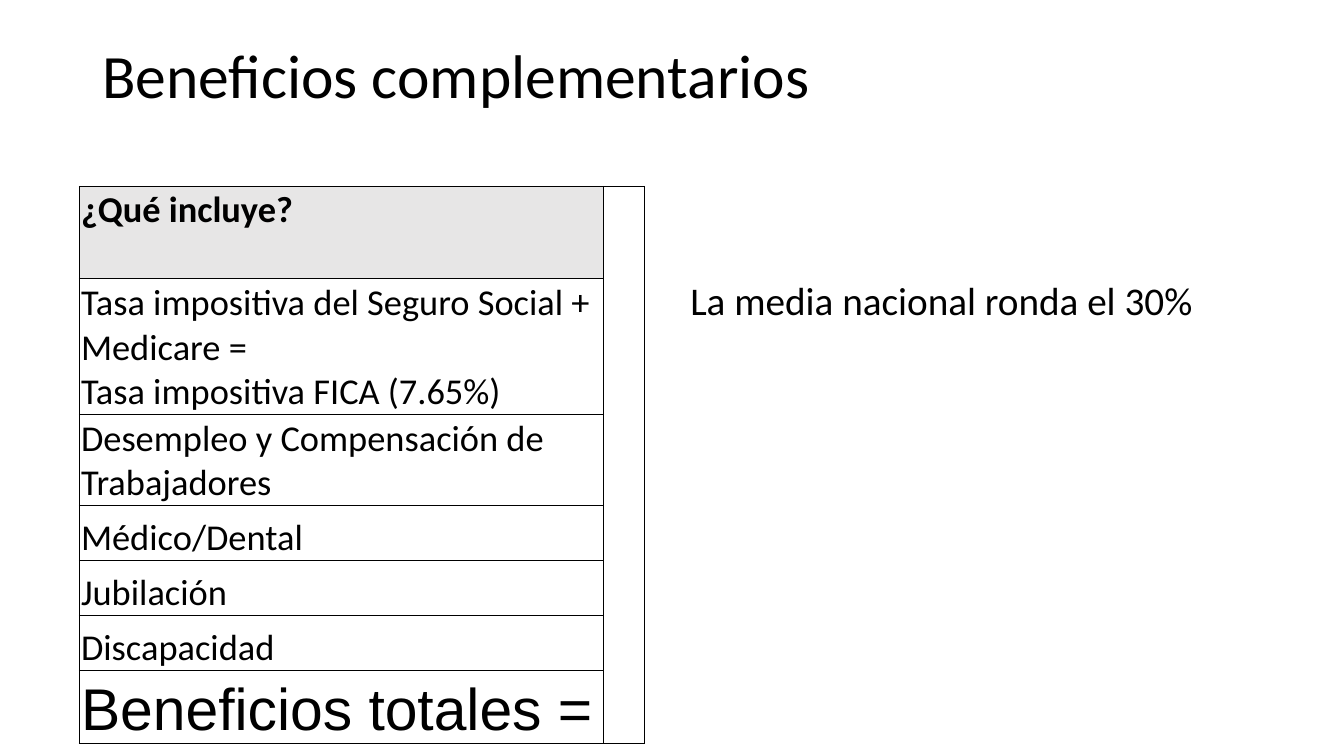
from lxml import etree
from pptx import Presentation
from pptx.dml.color import RGBColor
from pptx.enum.text import MSO_ANCHOR, PP_ALIGN
from pptx.oxml.ns import qn
from pptx.util import Pt

TOP, BOTTOM = MSO_ANCHOR.TOP, MSO_ANCHOR.BOTTOM
LEFT = PP_ALIGN.LEFT
BLACK = RGBColor(0, 0, 0)
GREY = RGBColor(0xE7, 0xE6, 0xE6)


def write(frame, text, size, name="Calibri", bold=False, line=1.0):
    par = frame.paragraphs[0]
    par.text = text
    par.alignment = LEFT
    par.line_spacing = line
    look = {"size": Pt(size), "name": name, "bold": bold}
    for run in par.runs:
        for key, value in look.items():
            setattr(run.font, key, value)
        run.font.color.rgb = BLACK


def edge(cell):
    props = cell._tc.get_or_add_tcPr()
    for spot, side in enumerate(("lnL", "lnR", "lnT", "lnB")):
        line = etree.Element(qn("a:" + side), w=str(Pt(0.5)))
        fill = etree.SubElement(line, qn("a:solidFill"))
        etree.SubElement(fill, qn("a:srgbClr"), val=str(BLACK))
        props.insert(spot, line)


deck = Presentation()
deck.slide_width, deck.slide_height = Pt(960), Pt(540)
slide = deck.slides.add_slide(deck.slide_layouts[6])

boxes = [
    ("Beneficios complementarios", 44, (66, 28.75, 828, 104.4)),
    ("La media nacional ronda el 30%", 28, (486, 197.3, 408, 290)),
]
for text, size, place in boxes:
    box = slide.shapes.add_textbox(*map(Pt, place))
    box.text_frame.word_wrap = True
    box.text_frame.vertical_anchor = TOP
    write(box.text_frame, text, size, line=0.9)

rows = [
    ("¿Qué incluye?", 66),
    ("Tasa impositiva del Seguro Social + Medicare = \vTasa impositiva FICA (7.65%)", 97),
    ("Desempleo y Compensación de Trabajadores", 65),
    ("Médico/Dental", 39.4),
    ("Jubilación", 39.4),
    ("Discapacidad", 39.4),
    ("Beneficios totales =", 48.4),
]
high = sum(tall for text, tall in rows)
table = slide.shapes.add_table(
    len(rows), 2, Pt(56.5), Pt(133), Pt(404), Pt(high)).table
table.columns[0].width, table.columns[1].width = Pt(374.4), Pt(29.6)
last = len(rows) - 1
pads = {"margin_left": Pt(1.4), "margin_right": Pt(1.4),
        "margin_top": Pt(1.4), "margin_bottom": 0}

for num, (text, tall) in enumerate(rows):
    table.rows[num].height = Pt(tall)
    for col in range(2):
        cell = table.cell(num, col)
        for key, value in pads.items():
            setattr(cell, key, value)
        cell.fill.background()
        edge(cell)
    cell = table.cell(num, 0)
    cell.vertical_anchor = BOTTOM if num else TOP
    if num == last:
        write(cell.text_frame, text, 42, "Arial")
    else:
        write(cell.text_frame, text, 26, bold=num == 0)

head = table.cell(0, 0)
head.fill.solid()
head.fill.fore_color.rgb = GREY
table.cell(0, 1).merge(table.cell(last, 1))

deck.save("out.pptx")
